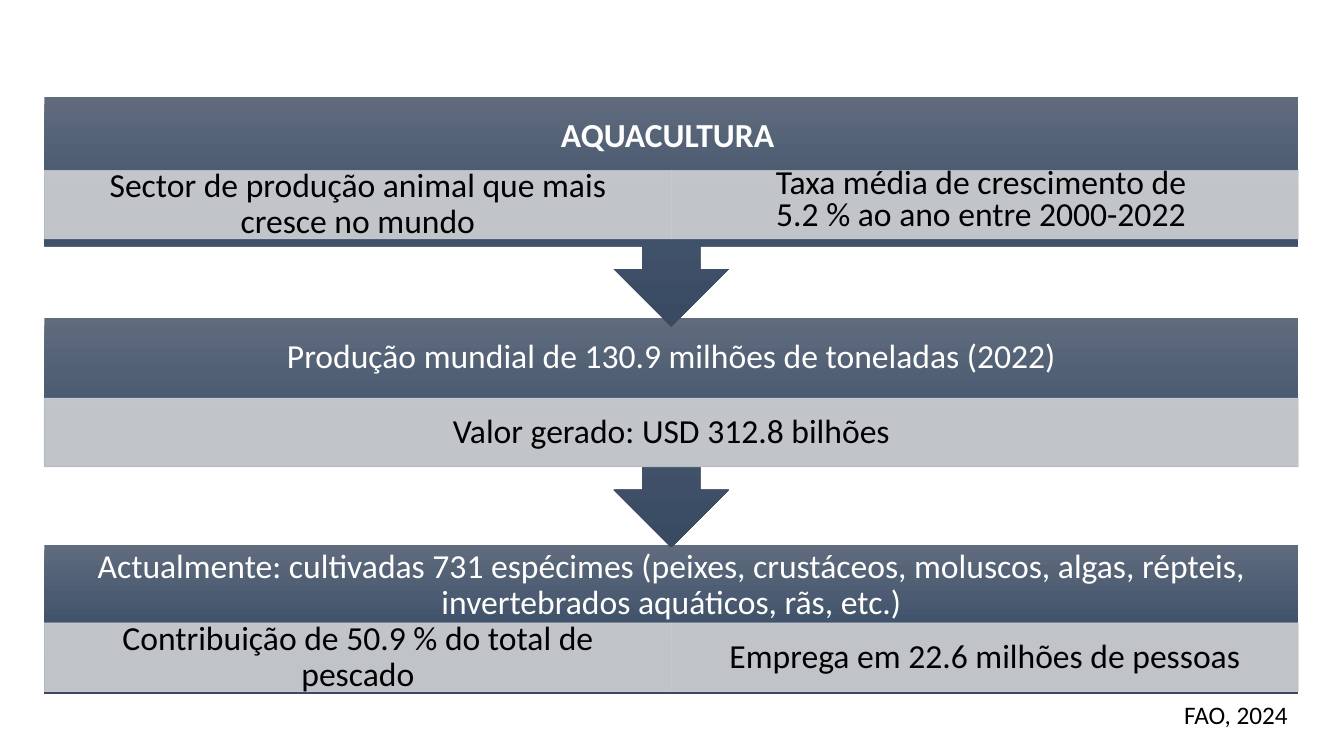
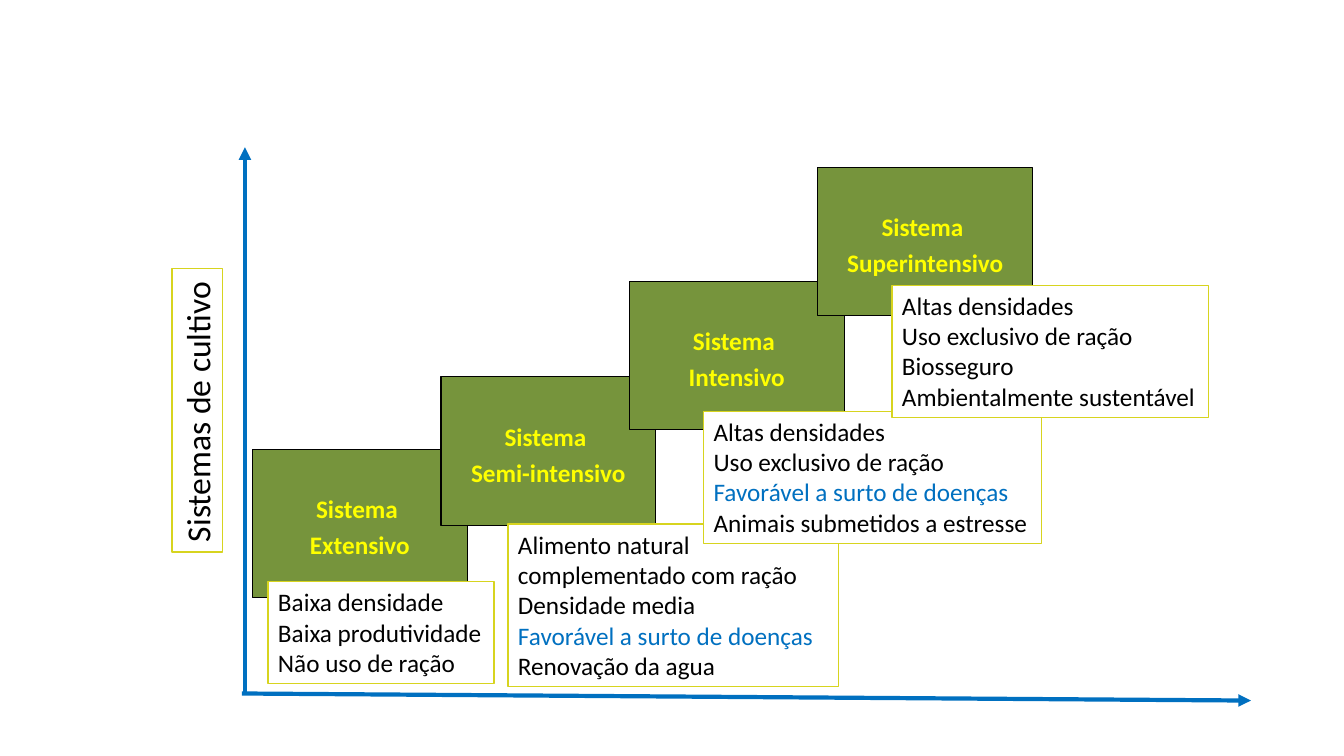
from dataclasses import dataclass

from pptx import Presentation
from pptx.dml.color import RGBColor as Rgb
from pptx.enum.shapes import MSO_CONNECTOR as Wire, MSO_SHAPE as Form
from pptx.enum.text import MSO_ANCHOR as Anchor, MSO_AUTO_SIZE as Auto, PP_ALIGN as Align
from pptx.oxml import parse_xml as parse
from pptx.oxml.ns import nsdecls, qn
from pptx.util import Inches, Pt


@dataclass(frozen=True)
class Theme:
    font: str = "Calibri"
    big: int = 24
    small: int = 18
    black: str = "000000"
    white: str = "FFFFFF"
    slate: tuple = ("606B7D", "42546C", "394A62")
    pale: str = "CFD1D4"
    green: str = "76943C"
    yellow: str = "FFFF00"
    lime: str = "D7D41F"
    blue: str = "0070C0"


LOOK = Theme()
WIDE, TALL, CELL = 133.33, 75, 0.1


def grid(*cells):
    return [Inches(n * CELL) for n in cells]


def put(frame, lines, size=LOOK.small, color=LOOK.black, bold=False, align=Align.LEFT,
        anchor=Anchor.TOP, wrap=True, grow=False, lead=None, gap=0, pad=None):
    frame.word_wrap = wrap
    frame.auto_size = Auto.SHAPE_TO_FIT_TEXT if grow else Auto.NONE
    frame.vertical_anchor = anchor
    if pad:
        side, edge = grid(*pad)
        frame.margin_left = frame.margin_right = side
        frame.margin_top = frame.margin_bottom = edge
    for i, line in enumerate(lines):
        words, tint = line if isinstance(line, tuple) else (line, color)
        para = frame.add_paragraph() if i else frame.paragraphs[0]
        para.alignment = align
        if lead:
            para.line_spacing = lead
        if gap and i < len(lines) - 1:
            para.space_after = Pt(gap)
        run = para.add_run()
        run.text = words
        font = run.font
        font.name, font.size, font.bold = LOOK.font, Pt(size), bold
        font.color.rgb = Rgb.from_string(tint)


class Deck:
    def __init__(self):
        self.file = Presentation()
        self.file.slide_width, self.file.slide_height = grid(WIDE, TALL)

    def page(self):
        self.shapes = self.file.slides.add_slide(self.file.slide_layouts[6]).shapes

    def form(self, box, kind=Form.RECTANGLE, fill=None, edge=None, width=1, clear=None):
        shape = self.shapes.add_shape(kind, *grid(*box))
        shape.shadow.inherit = False
        if fill:
            shape.fill.solid()
            shape.fill.fore_color.rgb = Rgb.from_string(fill)
        if edge:
            shape.line.color.rgb = Rgb.from_string(edge)
            shape.line.width = Pt(width)
        else:
            shape.line.fill.background()
        if clear:
            for tint in shape._element.spPr.iter(qn("a:srgbClr")):
                tint.append(parse(f'<a:alpha {nsdecls("a")} val="{clear * 1000}"/>'))
        return shape

    def text(self, box, lines, **style):
        put(self.shapes.add_textbox(*grid(*box)).text_frame, lines, **style)

    def block(self, box, kind):
        shape = self.form(box, kind)
        stops = "".join(f'<a:gs pos="{i * 50000}"><a:srgbClr val="{tint}"/></a:gs>'
                        for i, tint in enumerate(LOOK.slate))
        shape._element.spPr.find(qn("a:prstGeom")).addnext(parse(
            f'<a:gradFill {nsdecls("a")} rotWithShape="1"><a:gsLst>{stops}</a:gsLst>'
            '<a:lin ang="5400000" scaled="0"/></a:gradFill>'))

    def stage(self, left, top, width, height, kind, head, bold, row, cells):
        style = dict(size=LOOK.big, align=Align.CENTER, anchor=Anchor.MIDDLE)
        self.block((left, top, width, height), kind)
        self.text((left, top, width, 8), [head], color=LOOK.white, bold=bold,
                  lead=0.9, pad=(1.9, 1.9), **style)
        part = width / len(cells)
        for i, lines in enumerate(cells):
            cell = self.form((left + i * part, row, part, 6.8), fill=LOOK.pale,
                             edge=LOOK.pale, width=0.5, clear=90)
            put(cell.text_frame, lines, lead=0.5 if len(lines) > 1 else 0.9,
                gap=0.35 * LOOK.big, pad=(1.9, 0.3), **style)

    def step(self, left, top, name):
        box = self.form((left, top, 21.3, 14.7), fill=LOOK.green, edge=LOOK.black, width=0.75)
        put(box.text_frame, ["Sistema ", name], color=LOOK.yellow, bold=True,
            align=Align.CENTER, anchor=Anchor.MIDDLE, wrap=False, lead=1.2)

    def note(self, box, lines, turn=0, wrap=False, size=LOOK.small):
        shape = self.form(box, fill=LOOK.white, edge=LOOK.lime)
        shape.rotation = turn
        put(shape.text_frame, lines, size=size, wrap=wrap, grow=True)

    def arrow(self, *ends):
        line = self.shapes.add_connector(Wire.STRAIGHT, *grid(*ends))
        line.line.color.rgb = Rgb.from_string(LOOK.blue)
        line.line.width = Pt(3)
        line.line._get_or_add_ln().append(parse(f'<a:tailEnd {nsdecls("a")} type="triangle"/>'))
        line._element.spPr.append(parse(f'<a:effectLst {nsdecls("a")}/>'))


def facts(deck):
    deck.page()
    down = Form.DOWN_ARROW_CALLOUT
    stages = [
        (54.1, 14.8, Form.RECTANGLE,
         "Actualmente: cultivadas 731 espécimes (peixes, crustáceos, moluscos, algas, "
         "répteis, invertebrados aquáticos, rãs, etc.)", False, 61.8,
         [["Contribuição de 50.9 % do total de pescado"],
          ["Emprega em 22.6 milhões de pessoas"]]),
        (31.5, 22.8, down, "Produção mundial de 130.9 milhões de toneladas (2022)", False, 39.5,
         [["Valor gerado: USD 312.8 bilhões"]]),
        (9.6, 22.8, down, "AQUACULTURA ", True, 16.9,
         [["Sector de produção animal que mais cresce no mundo"],
          ["Taxa média de crescimento de ", "5.2 % ao ano entre 2000-2022 "]]),
    ]
    for top, height, *rest in stages:
        deck.stage(4.4, top, 124.4, height, *rest)
    deck.text((116.5, 68.9, 12.4, 4), ["FAO, 2024"], wrap=False, grow=True)


def systems(deck):
    deck.page()
    deck.arrow(24.3, 68.8, 24.3, 14.6)
    deck.arrow(24, 68.8, 124.1, 69.5)
    risk = ("Favorável a surto de doenças", LOOK.blue)
    dense = ["Altas densidades", "Uso exclusivo de ração"]
    steps = [
        (44.6, "Extensivo", 26.6, 57.7, 22.4, 3,
         ["Baixa densidade", "Baixa produtividade", "Não uso de ração"]),
        (37.4, "Semi-intensivo", 50.4, 52, 32.8, 5,
         ["Alimento natural complementado com ração", "Densidade media", risk,
          "Renovação da agua"]),
        (27.9, "Intensivo", 69.8, 40.8, 33.5, 4,
         dense + [risk, "Animais submetidos a estresse"]),
        (16.6, "Superintensivo", 88.5, 28.3, 31.4, 4,
         dense + ["Biosseguro", "Ambientalmente sustentável"]),
    ]
    for i, (top, name, left, low, width, rows, lines) in enumerate(steps):
        deck.step(25.05 + 18.7 * i, top, name)
        deck.note((left, low, width, 3 * rows + 1.1), lines, wrap=rows > len(lines))
    deck.note((5.5, 38.2, 28.1, 5), ["Sistemas de cultivo"], turn=270, size=LOOK.big)


def main():
    deck = Deck()
    facts(deck)
    systems(deck)
    deck.file.save("out.pptx")


if __name__ == "__main__":
    main()
